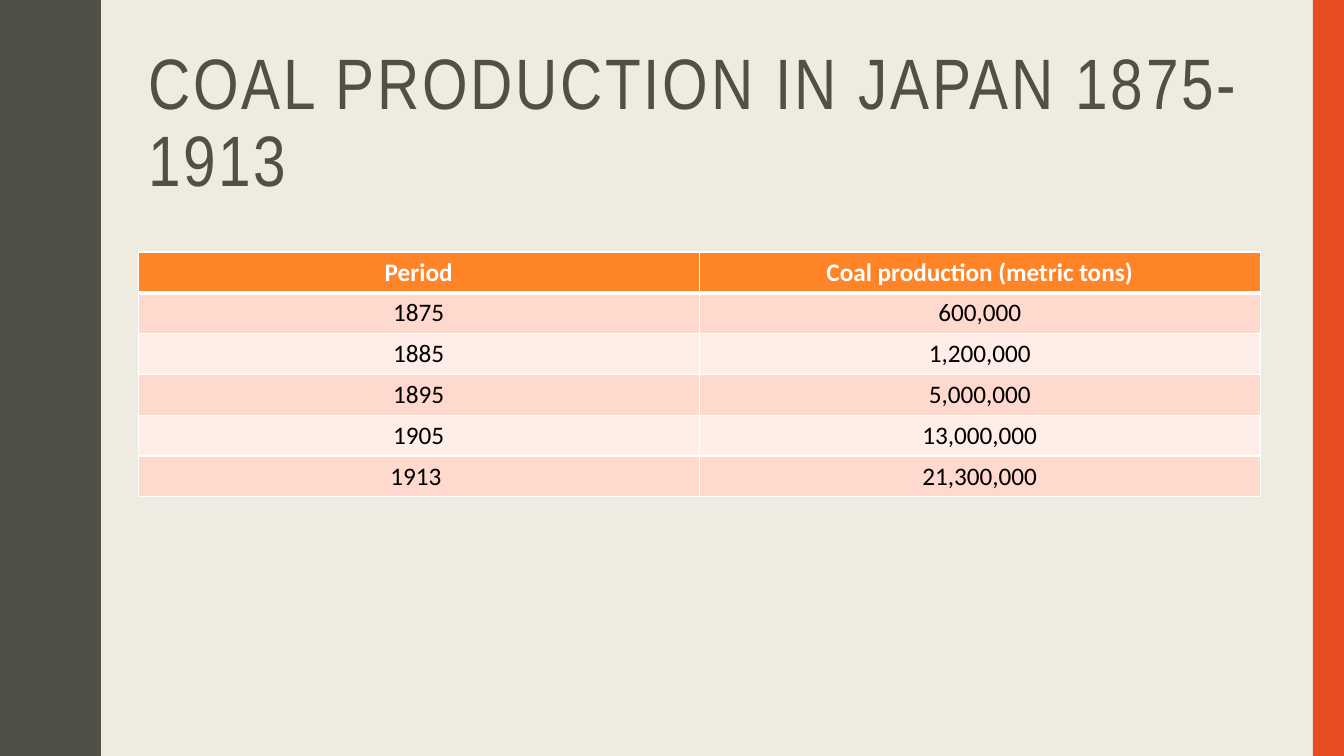
import pptx
import pptx.util
import pptx.dml.color
import pptx.enum.shapes
import pptx.enum.text
import pptx.oxml
import pptx.oxml.ns

Inches, Pt = pptx.util.Inches, pptx.util.Pt
RGBColor = pptx.dml.color.RGBColor

# Content
TITLE = "COAL PRODUCTION IN JAPAN 1875-1913"
ROWS = [
    ("Period", "Coal production (metric tons)"),
    ("1875", "600,000"),
    ("1885", "1,200,000"),
    ("1895", "5,000,000"),
    ("1905", "13,000,000"),
    ("1913 ", "21,300,000"),
]

# Colours
CREAM = RGBColor(0xEE, 0xEC, 0xE1)
OLIVE = RGBColor(0x50, 0x50, 0x46)
RED = RGBColor(0xE8, 0x4C, 0x22)
ORANGE = RGBColor(0xFF, 0x84, 0x27)
BANDS = [RGBColor(0xFF, 0xED, 0xE8), RGBColor(0xFF, 0xD9, 0xCD)]
WHITE = RGBColor(0xFF, 0xFF, 0xFF)
BLACK = RGBColor(0, 0, 0)

# Layout in inches
SLIDE_W, SLIDE_H = 13.33, 7.5
LEFT, WIDTH = 1.37, 11.13
TABLE_TOP, ROW_H = 2.5, 0.405
BAR_W = 0.31
WAVE_PERIOD, WAVE_COUNT = 1.5, 5
# Half a wave, from trough to just before the crest; the rest mirrors it
HALF_WAVE = [(0.78, 0), (0.78, 0.07), (0.79, 0.14), (0.8, 0.2), (0.81, 0.25),
             (0.83, 0.29), (0.85, 0.33), (0.87, 0.38), (0.89, 0.42), (0.91, 0.46),
             (0.93, 0.5), (0.95, 0.55), (0.96, 0.61), (0.97, 0.68)]
CREST = (0.97, 0.75)


def paint(shape, colour):
    shape.shadow.inherit = False
    shape.fill.solid()
    shape.fill.fore_color.rgb = colour
    shape.line.fill.background()


def set_borders(cell, top, bottom):
    tcPr = cell._tc.get_or_add_tcPr()
    widths = {"lnL": 1, "lnR": 1, "lnT": top, "lnB": bottom}
    for i, (side, width) in enumerate(widths.items()):
        tcPr.insert(i, pptx.oxml.parse_xml(
            f'<a:{side} {pptx.oxml.ns.nsdecls("a")} w="{Pt(width)}">'
            f'<a:solidFill><a:srgbClr val="{WHITE}"/></a:solidFill></a:{side}>'))


prs = pptx.Presentation()
prs.slide_width, prs.slide_height = Inches(SLIDE_W), Inches(SLIDE_H)
s = prs.slides.add_slide(prs.slide_layouts[6])
s.background.fill.solid()
s.background.fill.fore_color.rgb = CREAM

# Wavy left edge
wave = HALF_WAVE + [CREST] + [(x, WAVE_PERIOD - y) for x, y in HALF_WAVE[:0:-1]]
edge = [(x, y + n * WAVE_PERIOD) for n in range(WAVE_COUNT) for x, y in wave]
edge += [(HALF_WAVE[0][0], SLIDE_H), (0, SLIDE_H)]
fb = s.shapes.build_freeform(0, 0, scale=Inches(1))
fb.add_line_segments(edge, close=True)
paint(fb.convert_to_shape(), OLIVE)

# Right bar
bar = s.shapes.add_shape(pptx.enum.shapes.MSO_SHAPE.RECTANGLE,
                         Inches(SLIDE_W - BAR_W), 0, Inches(BAR_W), Inches(SLIDE_H))
paint(bar, RED)

# Title
tf = s.shapes.add_textbox(Inches(LEFT), Inches(0.42), Inches(WIDTH), Inches(1.63)).text_frame
tf.word_wrap = True
tf.vertical_anchor = pptx.enum.text.MSO_ANCHOR.MIDDLE
p = tf.paragraphs[0]
p.line_spacing = 0.9
r = p.add_run()
r.text = TITLE
p.font.name, p.font.size = "Arial Narrow", Pt(51)
p.font.color.rgb = OLIVE
r.font._element.set("spc", "200")

# Table
table = s.shapes.add_table(len(ROWS), len(ROWS[0]), Inches(LEFT), Inches(TABLE_TOP),
                           Inches(WIDTH), Inches(ROW_H * len(ROWS))).table
for i, row in enumerate(ROWS):
    header = i == 0
    for j, text in enumerate(row):
        cell = table.cell(i, j)
        cell.text = text
        cell.fill.solid()
        cell.fill.fore_color.rgb = ORANGE if header else BANDS[i % 2]
        set_borders(cell, top=3 if i == 1 else 1, bottom=3 if header else 1)
        p = cell.text_frame.paragraphs[0]
        p.alignment = pptx.enum.text.PP_ALIGN.CENTER
        p.font.name, p.font.size, p.font.bold = "Calibri", Pt(18), header
        p.font.color.rgb = WHITE if header else BLACK

prs.save("out.pptx")
